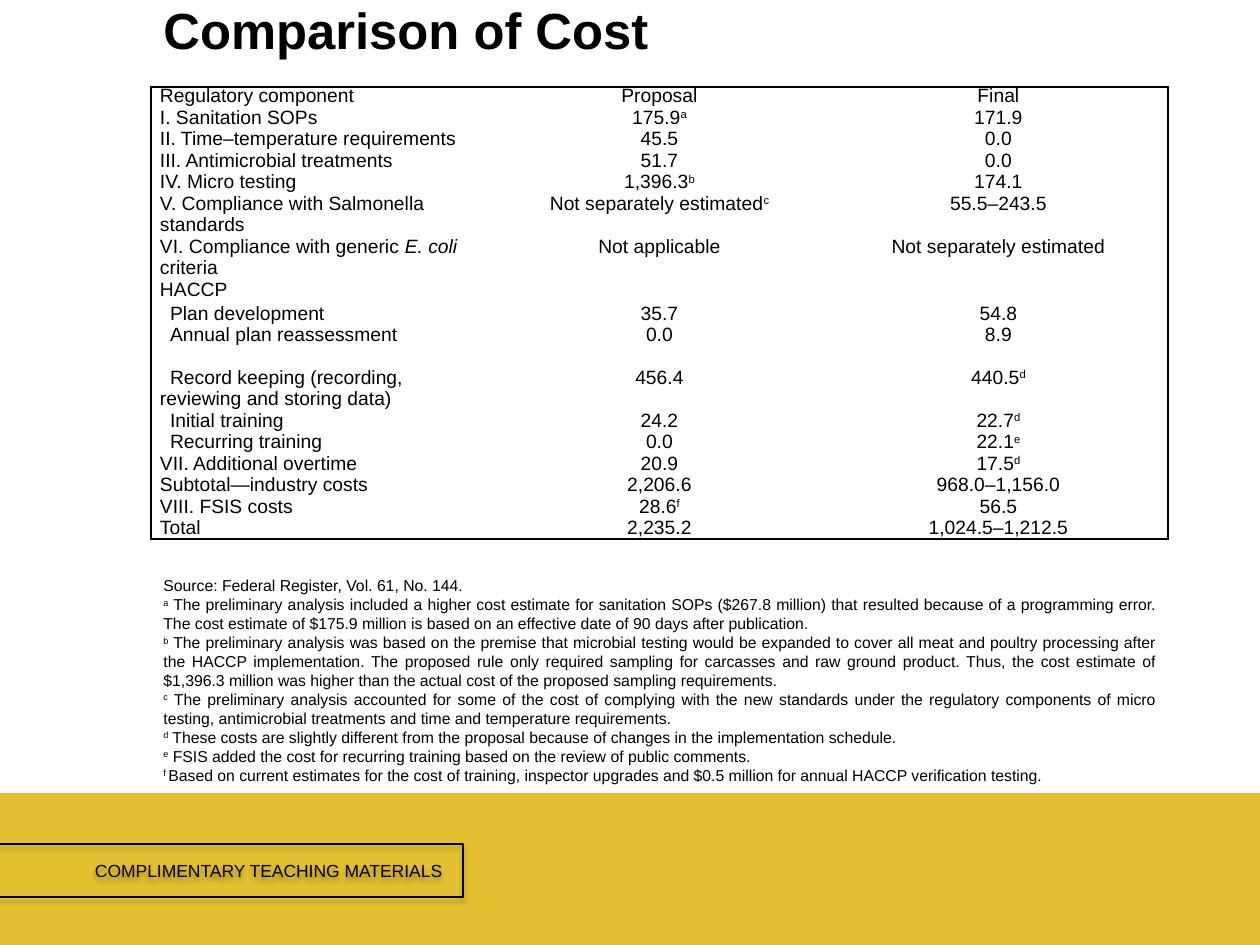
"""Build the slide comparing proposed and final regulatory costs."""
from lxml import etree
from pptx import Presentation
from pptx.dml.color import RGBColor
from pptx.enum.shapes import MSO_SHAPE
from pptx.enum.text import MSO_ANCHOR, PP_ALIGN
from pptx.oxml.ns import qn
from pptx.util import Pt

RECTANGLE = MSO_SHAPE.RECTANGLE
LEFT, CENTER, JUSTIFY = PP_ALIGN.LEFT, PP_ALIGN.CENTER, PP_ALIGN.JUSTIFY
MIDDLE = MSO_ANCHOR.MIDDLE
EMU_PER_PX = 914400 / 126
BLACK, GOLD = "000000", "E4C030"


def px(length):
    """Turn px into EMU."""
    return round(length * EMU_PER_PX)


def write(paragraph, text, size, align=LEFT, bold=False):
    """Fill a paragraph; | parts runs, ^ starts a superscript and _ an italic."""
    paragraph.alignment = align
    for part in text.split("|"):
        run = paragraph.add_run()
        run.text = part.lstrip("^_")
        run.font.size = Pt(size)
        run.font.name = "Arial"
        run.font.bold = bold
        run.font.color.rgb = RGBColor.from_string(BLACK)
        if part.startswith("^"):
            run.font._element.set("baseline", "30000")
        if part.startswith("_"):
            run.font.italic = True


costs = [
    ("Regulatory component", "Proposal", "Final"),
    ("I. Sanitation SOPs", "175.9|^a", "171.9"),
    ("II. Time–temperature requirements", "45.5", "0.0"),
    ("III. Antimicrobial treatments", "51.7", "0.0"),
    ("IV. Micro testing", "1,396.3|^b", "174.1"),
    ("V. Compliance with Salmonella standards", "Not separately estimated|^c", "55.5–243.5"),
    ("VI. Compliance with generic |_E. coli |criteria", "Not applicable", "Not separately estimated"),
    ("HACCP", "", ""),
    ("Plan development", "35.7", "54.8"),
    ("Annual plan reassessment", "0.0", "8.9"),
    ("Record keeping (recording, reviewing and storing data)", "456.4", "440.5|^d"),
    ("Initial training", "24.2", "22.7|^d"),
    ("Recurring training", "0.0", "22.1|^e"),
    ("VII. Additional overtime", "20.9", "17.5|^d"),
    ("Subtotal—industry costs", "2,206.6", "968.0–1,156.0"),
    ("VIII. FSIS costs", "28.6|^f", "56.5"),
    ("Total", "2,235.2", "1,024.5–1,212.5"),
]
haccp_items = range(8, 13)
tall_rows = {5: 43, 6: 43, 9: 43, 10: 43}
notes = [
    "Source: Federal Register, Vol. 61, No. 144.",
    "^a| The preliminary analysis included a higher cost estimate for sanitation SOPs ($267.8 million) "
    "that resulted because of a programming error. The cost estimate of $175.9 million is based on an "
    "effective date of 90 days after publication.",
    "^b| The preliminary analysis was based on the premise that microbial testing would be expanded to "
    "cover all meat and poultry processing after the HACCP implementation. The proposed rule only "
    "required sampling for carcasses and raw ground product. Thus, the cost estimate of $1,396.3 million "
    "was higher than the actual cost of the proposed sampling requirements.",
    "^c| The preliminary analysis accounted for some of the cost of complying with the new standards under "
    "the regulatory components of micro testing, antimicrobial treatments and time and temperature "
    "requirements.",
    "^d| These costs are slightly different from the proposal because of changes in the implementation "
    "schedule.",
    "^e| FSIS added the cost for recurring training based on the review of public comments.",
    "^f |Based on current estimates for the cost of training, inspector upgrades and $0.5 million for "
    "annual HACCP verification testing.",
]

prs = Presentation()
prs.slide_width, prs.slide_height = px(1260), px(945)
slide = prs.slides.add_slide(prs.slide_layouts[6])

footer = slide.shapes.add_shape(RECTANGLE, 0, px(795), px(1260), px(150))
footer.shadow.inherit = False
footer.fill.solid()
footer.fill.fore_color.rgb = RGBColor.from_string(GOLD)
footer.line.color.rgb = RGBColor.from_string(GOLD)
footer.line.width = Pt(2)

banner = slide.shapes.add_shape(RECTANGLE, px(-5), px(844), px(468), px(53))
banner.shadow.inherit = False
banner.fill.background()
banner.line.color.rgb = RGBColor.from_string(BLACK)
banner.line.width = Pt(0.75)
effects = banner._element.spPr.find(qn("a:effectLst"))
glow = etree.SubElement(effects, qn("a:outerShdw"), blurRad=str(Pt(3.1)), dist=str(Pt(1.8)),
                        dir="5400000", rotWithShape="0")
tint = etree.SubElement(glow, qn("a:srgbClr"), val=BLACK)
etree.SubElement(tint, qn("a:alpha"), val="35000")
banner.text_frame.word_wrap = True
banner.text_frame.vertical_anchor = MIDDLE
banner.text_frame.margin_left = px(100)
write(banner.text_frame.paragraphs[0], "COMPLIMENTARY TEACHING MATERIALS", 10)

heights = [tall_rows.get(index, 20) for index in range(len(costs))]
cost_table = slide.shapes.add_table(len(costs), 3, px(151), px(87), px(1017), px(sum(heights))).table
cost_table.first_row = cost_table.horz_banding = False
for column in cost_table.columns:
    column.width = px(339)
for r, (row, height) in enumerate(zip(costs, heights)):
    cost_table.rows[r].height = px(height)
    for c, value in enumerate(row):
        cell = cost_table.cell(r, c)
        cell.margin_left = cell.margin_right = px(9)
        cell.margin_top = cell.margin_bottom = 0
        paragraph = cell.text_frame.paragraphs[0]
        if value:
            write(paragraph, value, 11, CENTER if c else LEFT)
        else:
            etree.SubElement(paragraph._p, qn("a:endParaRPr"), sz="1100")
        if r == 0:
            paragraph.line_spacing = Pt(11)
        if c == 0 and r in haccp_items:
            paragraph._p.get_or_add_pPr().set("indent", str(px(10)))
        properties = cell._tc.get_or_add_tcPr()
        outer_edges = {"L": c == 0, "R": c == 2, "T": r == 0, "B": r == len(costs) - 1}
        for side, outer in outer_edges.items():
            edge = etree.SubElement(properties, qn("a:ln" + side), w=str(Pt(1)))
            if outer:
                paint = etree.SubElement(edge, qn("a:solidFill"))
                etree.SubElement(paint, qn("a:srgbClr"), val=BLACK)
            else:
                etree.SubElement(edge, qn("a:noFill"))
        cell.fill.background()

title = slide.shapes.add_textbox(px(151), px(-33), px(992), px(137)).text_frame
title.word_wrap = True
title.margin_top = px(32)
write(title.paragraphs[0], "Comparison of Cost", 29, bold=True)

footnotes = slide.shapes.add_textbox(px(151), px(570), px(1017), px(223)).text_frame
footnotes.word_wrap = True
for index, note in enumerate(notes):
    paragraph = footnotes.add_paragraph() if index else footnotes.paragraphs[0]
    write(paragraph, note, 9, JUSTIFY)

prs.save("out.pptx")
